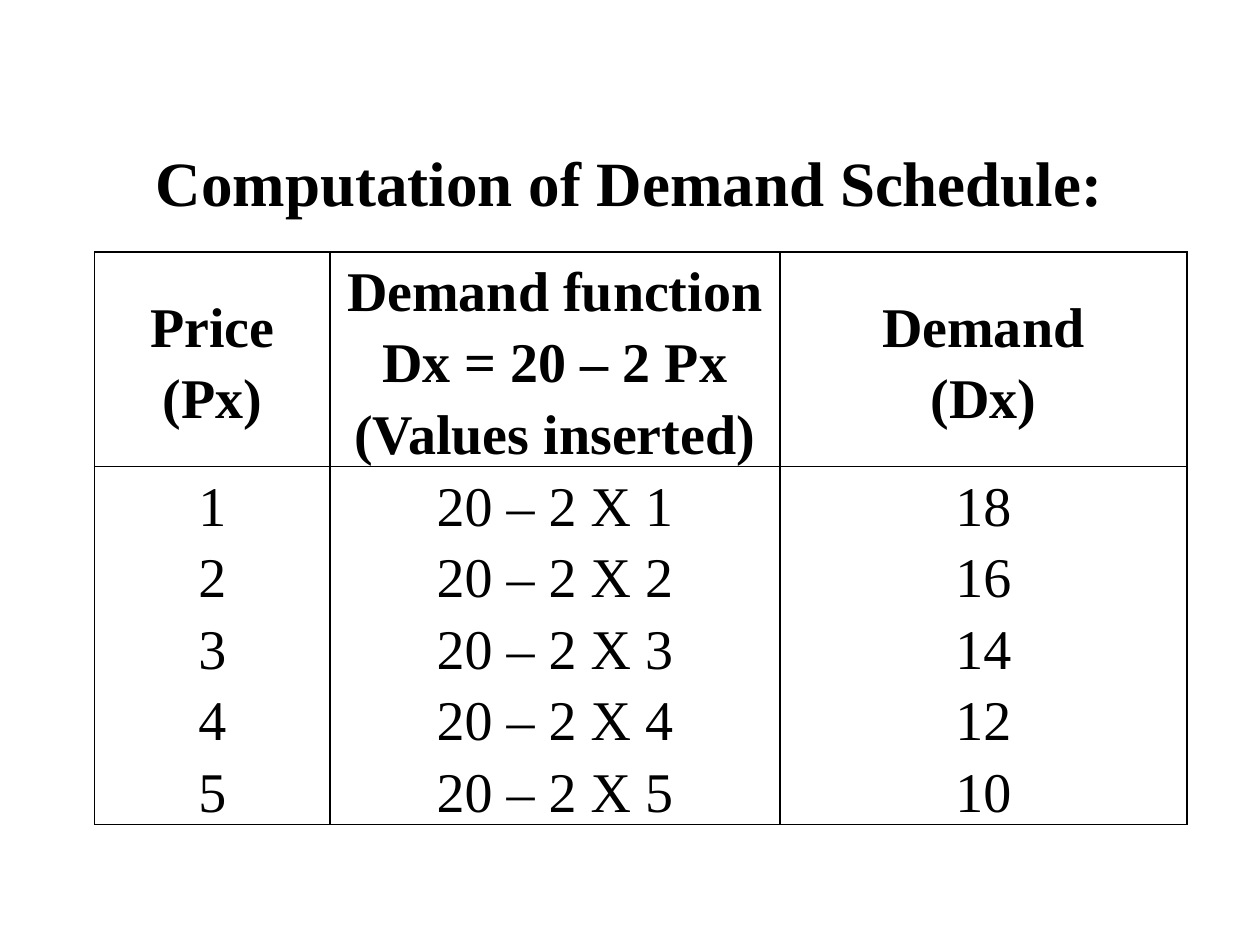
from dataclasses import dataclass

from lxml import etree
from pptx import Presentation
from pptx.dml.color import RGBColor
from pptx.enum.text import MSO_ANCHOR, PP_ALIGN
from pptx.oxml.ns import qn
from pptx.util import Inches, Pt

CENTER = PP_ALIGN.CENTER
MIDDLE = MSO_ANCHOR.MIDDLE


@dataclass(frozen=True)
class Theme:
    font: str = "Times New Roman"
    ink: str = "000000"
    title_size: int = 36
    table_size: int = 32
    border_width: int = 1


THEME = Theme()


def write_lines(tf, lines, size, bold, spacing):
    """Write each line as its own centred paragraph."""
    font_format = {"name": THEME.font, "size": Pt(size), "bold": bold}
    for i, line in enumerate(lines):
        p = tf.paragraphs[0] if i == 0 else tf.add_paragraph()
        p.alignment = CENTER
        p.line_spacing = spacing
        r = p.add_run()
        r.text = line
        for name, value in font_format.items():
            setattr(r.font, name, value)
        r.font.color.rgb = RGBColor.from_string(THEME.ink)


def add_borders(cell):
    tcPr = cell._tc.get_or_add_tcPr()
    for i, side in enumerate(("lnL", "lnR", "lnT", "lnB")):
        ln = etree.Element(qn(f"a:{side}"), w=str(Pt(THEME.border_width)))
        fill = etree.SubElement(ln, qn("a:solidFill"))
        etree.SubElement(fill, qn("a:srgbClr"), val=THEME.ink)
        tcPr.insert(i, ln)


prs = Presentation()
prs.slide_width, prs.slide_height = Inches(10), Inches(7.5)
s = prs.slides.add_slide(prs.slide_layouts[6])

# Demand schedule
prices = range(1, 6)
header = [
    ["Price", "(Px)"],
    ["Demand function", "Dx = 20 – 2 Px", "(Values inserted)"],
    ["Demand", "(Dx)"],
]
schedule = [
    [str(price) for price in prices],
    [f"20 – 2 X {price}" for price in prices],
    [str(20 - 2 * price) for price in prices],
]
col_widths = [1.87, 3.57, 3.23]
row_heights = [1.7, 2.84]
cell_format = {
    "margin_left": Inches(0.07),
    "margin_right": Inches(0.07),
    "margin_top": 0,
    "margin_bottom": 0,
    "vertical_anchor": MIDDLE,
}

table = s.shapes.add_table(
    len(row_heights), len(col_widths), Inches(0.75), Inches(2),
    Inches(sum(col_widths)), Inches(sum(row_heights)),
).table
table.first_row = table.horz_banding = False
for column, width in zip(table.columns, col_widths):
    column.width = Inches(width)

for i, (row, height) in enumerate(zip((header, schedule), row_heights)):
    table.rows[i].height = Inches(height)
    for j, lines in enumerate(row):
        cell = table.cell(i, j)
        for name, value in cell_format.items():
            setattr(cell, name, value)
        cell.fill.background()
        add_borders(cell)
        write_lines(cell.text_frame, lines, THEME.table_size, i == 0, 1.15)

# Title
title = s.shapes.add_textbox(Inches(0.83), Inches(1.08), Inches(8.33), Inches(1.01))
tf = title.text_frame
tf.word_wrap = True
tf.vertical_anchor = MIDDLE
tf.margin_bottom = Inches(0.34)
write_lines(tf, ["Computation of Demand Schedule:"], THEME.title_size, True, 1.0)

prs.save("out.pptx")
